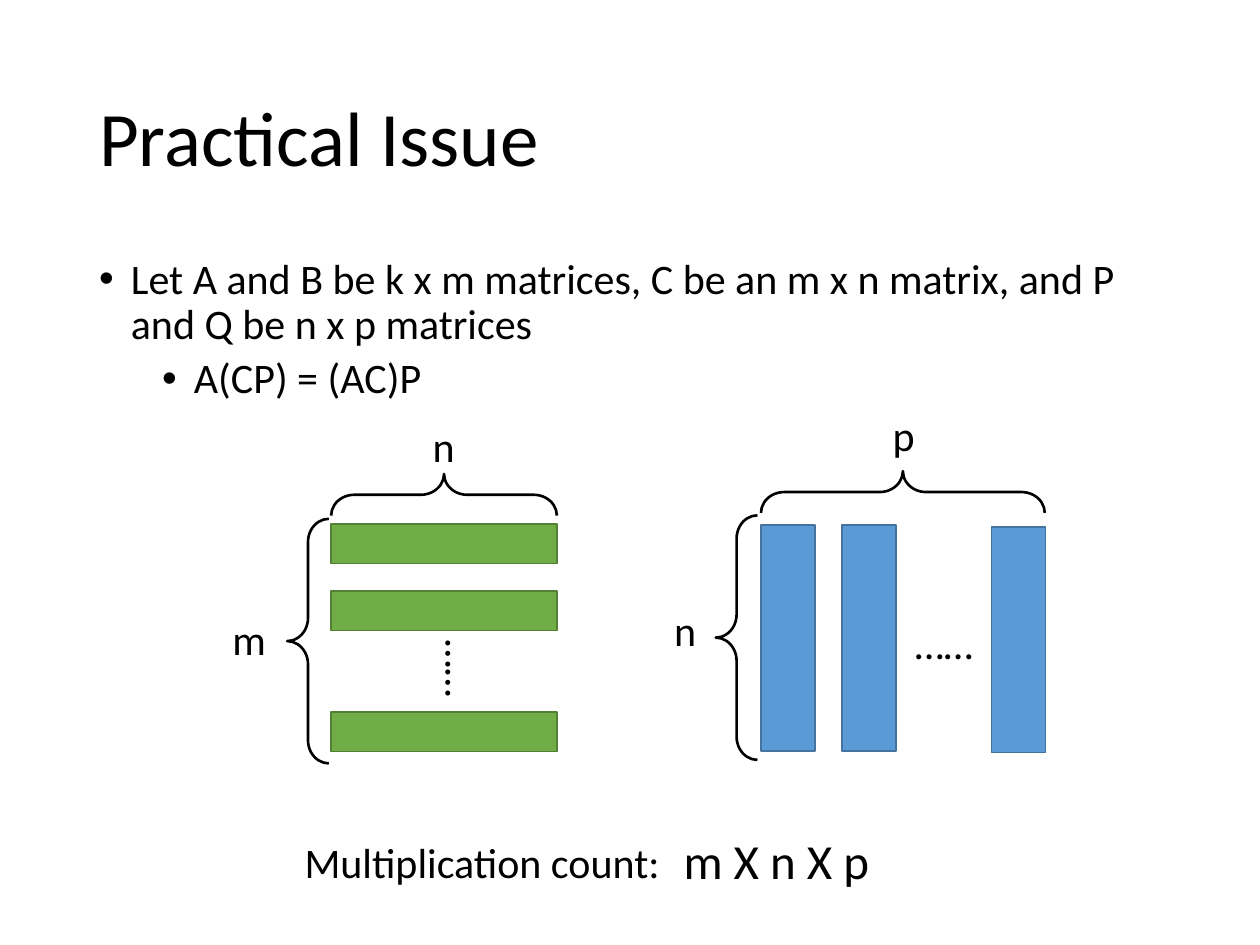
from dataclasses import dataclass

from lxml import etree
from pptx import Presentation
from pptx import util as u
from pptx.dml.color import RGBColor
from pptx.enum import shapes, text
from pptx.oxml.ns import qn

HUES = {
    "ink": "000000",
    "blue": "5B9BD5",
    "blue edge": "43739E",
    "green": "70AD47",
    "green edge": "538035",
}
MID = text.PP_ALIGN.CENTER
LEFT = text.PP_ALIGN.LEFT


@dataclass
class Box:
    """A frame in centimetres, turned clockwise in degrees."""
    left: float
    top: float
    wide: float
    high: float
    turn: float = 0

    def frame(self) -> tuple:
        return tuple(u.Cm(n) for n in (self.left, self.top, self.wide, self.high))


@dataclass
class Label:
    words: str
    box: Box
    size: int = 24
    align: int = MID


def hue(name: str) -> RGBColor:
    return RGBColor.from_string(HUES[name])


def style(para, words: str, size: int) -> None:
    para.text = words
    para.font.size = u.Pt(size)
    para.font.name = "Calibri"
    para.font.color.rgb = hue("ink")


def add_text(slide, label: Label):
    shape = slide.shapes.add_textbox(*label.box.frame())
    shape.rotation = label.box.turn
    frame = shape.text_frame
    frame.word_wrap = True
    para = frame.paragraphs[0]
    para.alignment = label.align
    style(para, label.words, label.size)
    return frame


def add_bullet(para, left: float) -> None:
    """Hang a round bullet before text that starts at left, in centimetres."""
    props = para._p.get_or_add_pPr()
    props.set("marL", str(u.Cm(left)))
    props.set("indent", str(-u.Cm(0.64)))
    font = etree.SubElement(props, qn("a:buFont"))
    font.set("typeface", "Arial")
    etree.SubElement(props, qn("a:buChar")).set("char", "•")
    # The schema wants the default run properties after the bullet.
    props.append(props.find(qn("a:defRPr")))


def add_bar(slide, box: Box, name: str) -> None:
    bar = slide.shapes.add_shape(shapes.MSO_SHAPE.RECTANGLE, *box.frame())
    bar.shadow.inherit = False
    bar.fill.solid()
    bar.fill.fore_color.rgb = hue(name)
    bar.line.color.rgb = hue(f"{name} edge")
    bar.line.width = u.Pt(1)


def add_brace(slide, box: Box) -> None:
    brace = slide.shapes.add_shape(shapes.MSO_SHAPE.LEFT_BRACE, *box.frame())
    brace.rotation = box.turn
    brace.adjustments[0] = 0.558
    brace.adjustments[1] = 0.5
    brace.shadow.inherit = False
    brace.fill.background()
    brace.line.color.rgb = hue("ink")
    brace.line.width = u.Pt(1.5)


def add_body(slide) -> None:
    first = "Let A and B be k x m matrices, C be an m x n matrix, and P and Q be n x p matrices"
    frame = add_text(slide, Label(first, Box(1.75, 5.08, 21.89, 12.09), align=LEFT))
    second = frame.add_paragraph()
    second.level = 1
    style(second, "A(CP) = (AC)P", 24)
    for para, gap, left in zip(frame.paragraphs, (10, 5), (0.64, 1.91)):
        para.line_spacing = 0.9
        para.space_before = u.Pt(gap)
        add_bullet(para, left)


ROWS = (10.57, 11.92, 14.36)
COLS = ((15.34, 10.59), (16.97, 10.59), (19.99, 10.62))
BRACES = (
    Box(5.79, 10.46, 0.84, 4.93),
    Box(14.43, 10.39, 0.84, 4.93),
    Box(8.53, 7.7, 0.84, 4.55, 90),
    Box(17.78, 7.06, 0.84, 5.72, 90),
)
LABELS = (
    Label("……", Box(8.43, 12.85, 1.78, 1.27, 90)),
    Label("……", Box(18.14, 12.32, 1.78, 1.27)),
    Label("m", Box(3.78, 12.24, 2.49, 1.27)),
    Label("n", Box(7.7, 8.36, 2.49, 1.27)),
    Label("n", Box(12.57, 12.07, 2.49, 1.27)),
    Label("p", Box(16.97, 8.13, 2.49, 1.27)),
    Label("m X n X p", Box(12.45, 16.61, 6.4, 1.45), 28),
    Label("Multiplication count:", Box(5.89, 16.74, 8.15, 1.27), align=LEFT),
)


def main() -> None:
    deck = Presentation()
    deck.slide_width, deck.slide_height = u.Cm(25.4), u.Cm(19.05)
    slide = deck.slides.add_slide(deck.slide_layouts[6])

    title = Label("Practical Issue", Box(1.75, 1.02, 21.89, 3.68), 44, LEFT)
    frame = add_text(slide, title)
    frame.vertical_anchor = text.MSO_ANCHOR.MIDDLE
    frame.paragraphs[0].line_spacing = 0.9
    add_body(slide)

    for top in ROWS:
        add_bar(slide, Box(6.68, top, 4.55, 0.79), "green")
    for left, top in COLS:
        add_bar(slide, Box(left, top, 1.09, 4.55), "blue")
    for brace in BRACES:
        add_brace(slide, brace)
    for label in LABELS:
        add_text(slide, label)

    deck.save("out.pptx")


if __name__ == "__main__":
    main()
